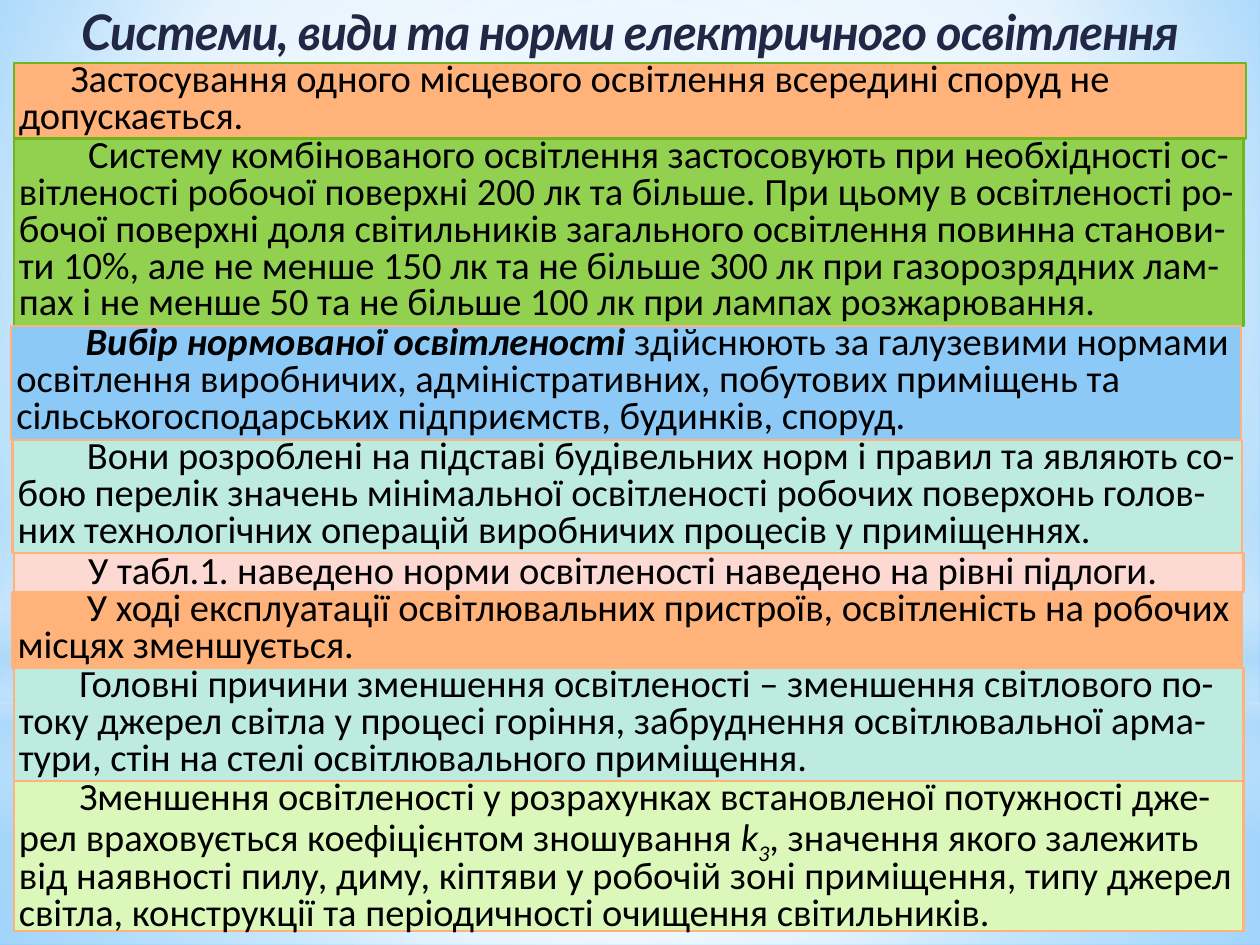
from lxml.etree import SubElement as Sub
from pptx import Presentation
from pptx.dml.color import RGBColor
from pptx.enum.shapes import MSO_SHAPE as Geo
from pptx.enum.text import MSO_ANCHOR as Anchor, MSO_AUTO_SIZE as Auto, PP_ALIGN as Align
from pptx.oxml.ns import qn
from pptx.util import Inches, Pt

# Content
TITLE = "Системи, види та норми електричного освітлення"
# Panels: left, width, height, fill, border, indent, spacing, runs (text, format)
PANELS = [
    (0.11, 9.78, 0.6, "FFB37A", "72B41D", 0.41, 0.8, [
        ("Застосування одного місцевого освітлення всередині споруд не допускається.", {})]),
    (0.11, 9.76, 1.49, "92D050", "72B41D", 0.55, 0.8, [
        ("Систему комбінованого освітлення застосовують при необхідності ос-вітленості "
         "робочої поверхні 200 лк та більше. При цьому в освітленості ро-бочої поверхні "
         "доля світильників загального освітлення повинна станови-ти 10%, але не менше "
         "150 лк та не більше 300 лк при газорозрядних лам-пах і не менше 50 та не більше "
         "100 лк при лампах розжарювання.", {})]),
    (0.09, 9.76, 0.9, "8CC9F7", "FFB37A", 0.55, 0.8, [
        ("Вибір нормованої освітленості ", {"bold": True, "italic": True}),
        ("здійснюють за галузевими нормами освітлення виробничих, адміністративних, "
         "побутових приміщень та сільськогосподарських підприємств, будинків, споруд.", {})]),
    (0.1, 9.76, 0.9, "BEEBDF", "FFB37A", 0.55, 0.8, [
        ("Вони розроблені на підставі будівельних норм і правил та являють со-бою перелік "
         "значень мінімальної освітленості робочих поверхонь голов-них технологічних "
         "операцій виробничих процесів у приміщеннях.", {})]),
    (0.11, 9.76, 0.31, "FCD9D3", "FFB37A", 0.55, 0.85, [
        ("У табл.1. наведено норми освітленості наведено на рівні підлоги.", {})]),
    (0.1, 9.76, 0.6, "FFB37A", "FFB37A", 0.55, 0.8, [
        ("У ході експлуатації освітлювальних пристроїв, освітленість на робочих місцях "
         "зменшується.", {})]),
    (0.11, 9.76, 0.9, "BEEBDF", "FFB37A", 0.48, 0.8, [
        ("Головні причини зменшення освітленості – зменшення світлового по-току джерел "
         "світла у процесі горіння, забруднення освітлювальної арма-тури, стін на стелі "
         "освітлювального приміщення.", {})]),
    (0.11, 9.76, 1.19, "DCF7BA", "FFB37A", 0.48, 0.8, [
        ("Зменшення освітленості у розрахунках встановленої потужності дже-рел "
         "враховується коефіцієнтом зношування ", {}),
        ("k", {"italic": True}),
        ("3", {"italic": True, "base": -25}),
        (", значення якого залежить від наявності пилу, диму, кіптяви у робочій зоні "
         "приміщення, типу джерел світла, конструкції та періодичності очищення "
         "світильників.", {})]),
]
# Backdrop: shape, top, height, stops (position, colour, opacity), centre or None
MID = (50, 50, 50, 50)
GLOWS = [
    (Geo.RECTANGLE, 5.58, 1.92,
     [(0, "FFFFFF", 91), (37, "FFFFFF", 76), (100, "B4DCFA", 79)], MID),
    (Geo.RECTANGLE, 0, 5.58,
     [(0, "FFFFFF", 89), (48, "FFFFFF", 62), (100, "B4DCFA", 79)], MID),
    (Geo.RECTANGLE, 4.12, 2.5,
     [(0, "FFFFFF", 0), (29, "FFFFFF", 30), (45, "B4DCFA", 40), (55, "FFFFFF", 26),
      (65, "B4DCFA", 60), (100, "FFFFFF", 0)], None),
    (Geo.OVAL, 1.75, 5.58, [(0, "FFFFFF", 100), (56, "FFFFFF", 0)], MID),
]
SKY = [(0, "9ED5FF", 100), (60, "FFFFFF", 100), (100, "5BB9FF", 100)]


def color(code):
    return RGBColor.from_string(code)


def shade(props, stops, mid):
    """Swap a solid fill for a gradient, round a centre or straight down."""
    grad = props.makeelement(qn("a:gradFill"), {"rotWithShape": "1"})
    props.replace(props.find(qn("a:solidFill")), grad)
    rows = Sub(grad, qn("a:gsLst"))
    for pos, code, alpha in stops:
        stop = Sub(rows, qn("a:gs"), pos=str(pos * 1000))
        tint = Sub(stop, qn("a:srgbClr"), val=code)
        if alpha < 100:
            Sub(tint, qn("a:alpha"), val=str(alpha * 1000))
    if mid:
        ring = Sub(grad, qn("a:path"), {"path": "circle"})
        Sub(ring, qn("a:fillToRect"), {k: str(v * 1000) for k, v in zip("ltrb", mid)})
    else:
        Sub(grad, qn("a:lin"), ang=str(90 * 60000), scaled="0")


def add_box(geo, left, top, width, height, fill):
    box = slide.shapes.add_shape(
        geo, Inches(left), Inches(top), Inches(width), Inches(height))
    box.shadow.inherit = False
    box.fill.solid()
    box.fill.fore_color.rgb = color(fill)
    box.line.fill.background()
    return box


def set_frame(frame, side, align, spacing):
    frame.word_wrap = True
    frame.auto_size = Auto.NONE
    frame.vertical_anchor = Anchor.TOP
    frame.margin_left = frame.margin_right = Inches(side)
    frame.margin_top = frame.margin_bottom = 0
    para = frame.paragraphs[0]
    para.alignment = align
    para.line_spacing = spacing
    return para


def add_text(para, text, size=22, font="Calibri", fill="000000",
             bold=False, italic=False, base=0, track=0):
    run = para.add_run()
    run.text = text
    face = run.font
    face.size, face.name, face.bold, face.italic = Pt(size), font, bold, italic
    face.color.rgb = color(fill)
    props = run._r.get_or_add_rPr()
    if base:
        props.set("baseline", str(base * 1000))
    if track:
        props.set("spc", str(int(track * 100)))


deck = Presentation()
deck.slide_width, deck.slide_height = Inches(10), Inches(7.5)
slide = deck.slides.add_slide(deck.slide_layouts[5])

# Background and glows
slide.background.fill.solid()
shade(slide._element.find(".//" + qn("p:bgPr")), SKY, (20, 10, 20, 60))
for geo, top, height, stops, mid in GLOWS:
    glow = add_box(geo, 0, top, 10, height, "FFFFFF")
    shade(glow._element.spPr, stops, mid)

# Title, brought in front of the glows
title = slide.shapes.title
slide.shapes._spTree.append(title._element)
title.left, title.top = Inches(0.12), Inches(0.08)
title.width, title.height = Inches(9.76), Inches(0.4)
para = set_frame(title.text_frame, 0, Align.CENTER, 0.85)
add_text(para, TITLE, size=28, font="Lato", fill="212745",
         bold=True, italic=True, track=-0.5)

# Panels stacked without gaps
top = 0.5
for left, width, height, fill, edge, indent, spacing, runs in PANELS:
    box = add_box(Geo.RECTANGLE, left, top, width, height, fill)
    box.line.color.rgb = color(edge)
    box.line.width = Pt(1.25)
    para = set_frame(box.text_frame, 0.04, Align.LEFT, spacing)
    para._p.get_or_add_pPr().set("indent", str(Inches(indent)))
    for text, style in runs:
        add_text(para, text, **style)
    top += height

deck.save("out.pptx")
